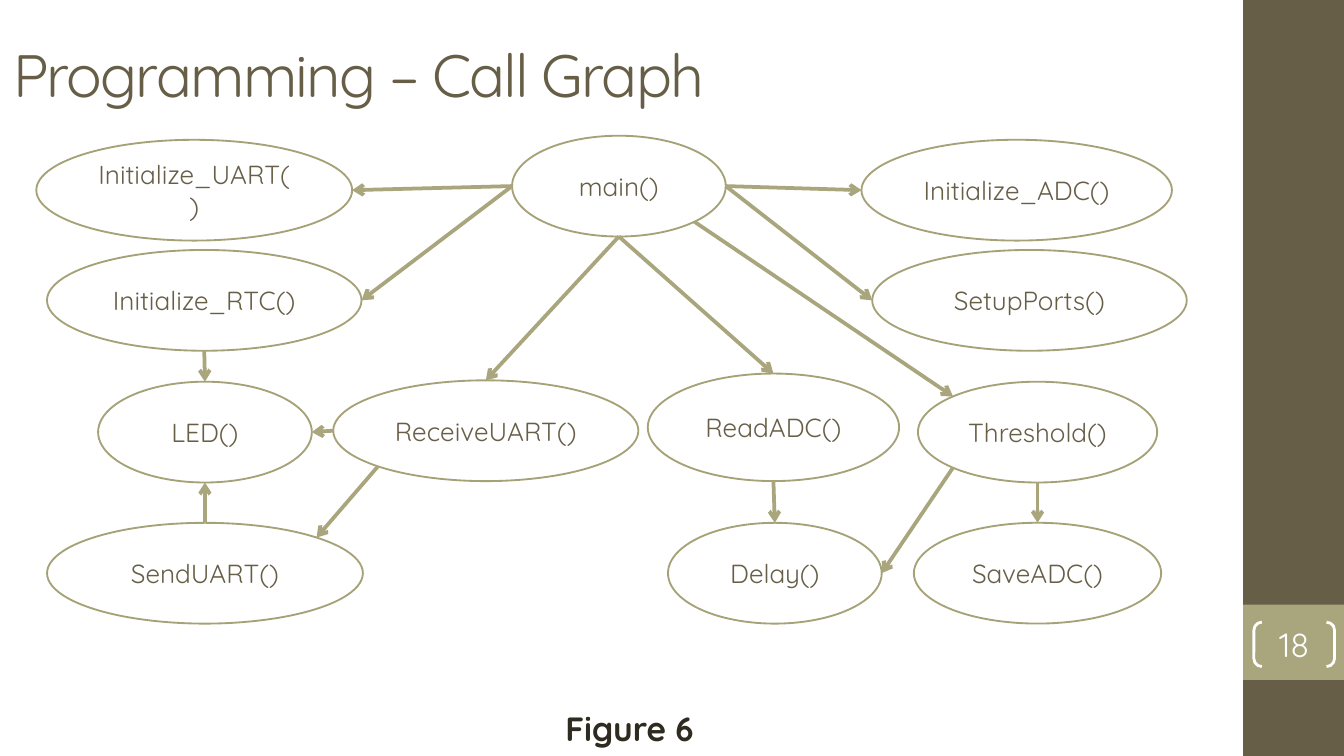
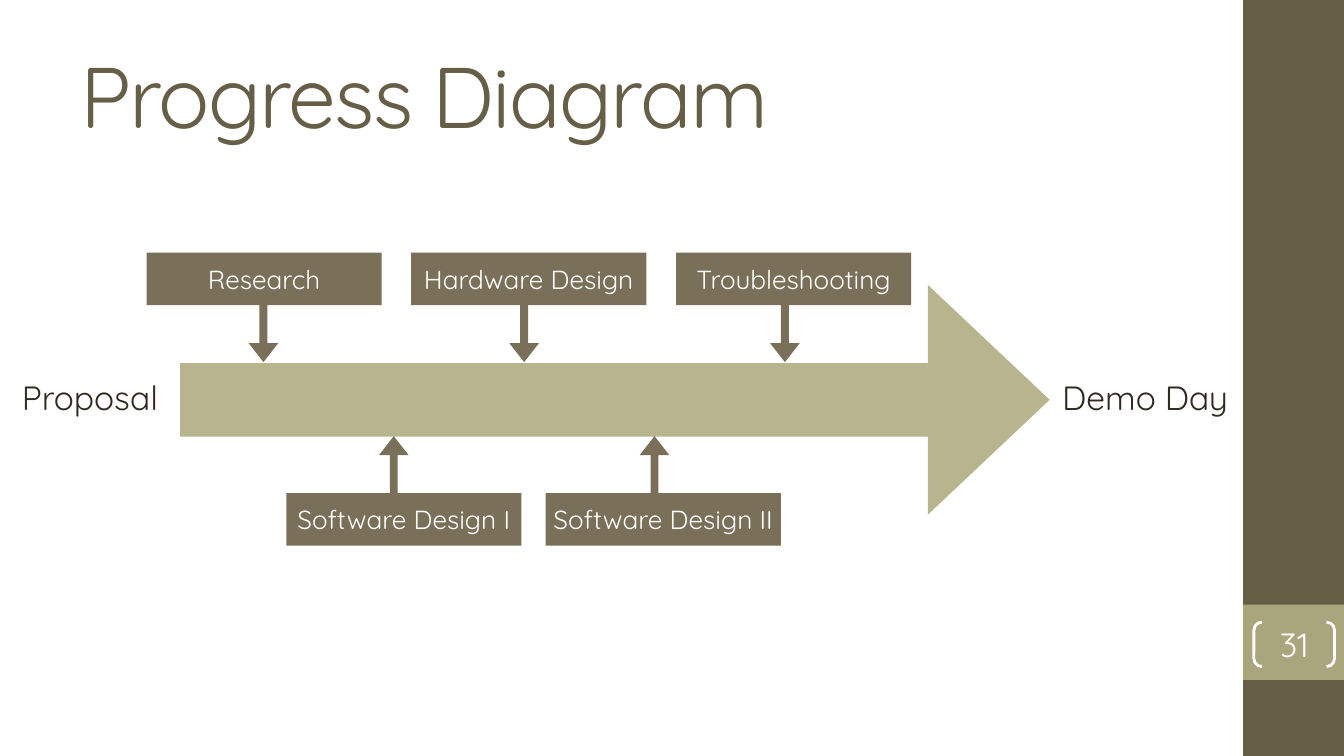
from math import sqrt

from lxml import etree
from pptx import Presentation
from pptx.dml.color import RGBColor
from pptx.enum.shapes import MSO_CONNECTOR, MSO_SHAPE
from pptx.enum.text import MSO_ANCHOR, PP_ALIGN
from pptx.oxml.ns import qn
from pptx.util import Inches, Pt

RECT, OVAL = MSO_SHAPE.RECTANGLE, MSO_SHAPE.OVAL
ARROW, BRACKETS = MSO_SHAPE.RIGHT_ARROW, MSO_SHAPE.DOUBLE_BRACKET
STRAIGHT = MSO_CONNECTOR.STRAIGHT
LEFT, CENTER = PP_ALIGN.LEFT, PP_ALIGN.CENTER
TOP_ANCHOR, MIDDLE = MSO_ANCHOR.TOP, MSO_ANCHOR.MIDDLE

SLIDE_W = 10
SLIDE_H = SLIDE_W * 9 / 16


class Theme:
    font = "Quicksand"
    dark, accent, outline = "675E47", "A9A57C", "A6A278"
    step, timeline = "7A7059", "B8B48E"
    ink, white = "2F2B20", "FFFFFF"
    body, label = 14, 18


# Slide 1: title, page, functions as (left, top, width, height), and calls
CALL_GRAPH = {"text": "Programming – Call Graph", "left": 0, "top": 0.08, "size": 32}
CALL_GRAPH_PAGE = "18"
CAPTION = "Figure 6"
FUNCTIONS = {
    "main()": (3.81, 1.01, 1.59, 0.75),
    "Initialize_UART()": (0.27, 1.04, 2.35, 0.75),
    "Initialize_ADC()": (6.41, 1.04, 2.31, 0.75),
    "Initialize_RTC()": (0.35, 1.86, 2.34, 0.75),
    "SetupPorts()": (6.49, 1.86, 2.34, 0.75),
    "LED()": (0.73, 2.84, 1.59, 0.75),
    "ReceiveUART()": (2.48, 2.83, 2.27, 0.75),
    "ReadADC()": (4.82, 2.78, 1.87, 0.8),
    "Threshold()": (6.83, 2.84, 1.78, 0.75),
    "SendUART()": (0.35, 3.89, 2.35, 0.75),
    "Delay()": (4.97, 3.89, 1.59, 0.75),
    "SaveADC()": (6.8, 3.89, 1.84, 0.75),
}
CALLS = [
    ("main()", "left", "Initialize_UART()", "right"),
    ("main()", "right", "Initialize_ADC()", "left"),
    ("main()", "left", "Initialize_RTC()", "right"),
    ("main()", "right", "SetupPorts()", "left"),
    ("main()", "bottom", "ReceiveUART()", "top"),
    ("main()", "bottom", "ReadADC()", "top"),
    ("main()", "bottom right", "Threshold()", "top left"),
    ("Initialize_RTC()", "bottom", "LED()", "top"),
    ("ReceiveUART()", "left", "LED()", "right"),
    ("ReceiveUART()", "bottom left", "SendUART()", "top right"),
    ("SendUART()", "top", "LED()", "bottom"),
    ("ReadADC()", "bottom", "Delay()", "top"),
    ("Threshold()", "bottom left", "Delay()", "right"),
    ("Threshold()", "bottom", "SaveADC()", "top"),
]

# Slide 2: title, page, end labels, and rows of steps along the timeline
PROGRESS = {"text": "Progress Diagram", "left": 0.5, "top": 0.23, "size": 46}
PROGRESS_PAGE = "31"
END_LABELS = [("Proposal", 0, 1.34), ("Demo Day", 7.78, 1.48)]
STEP_ROWS = [
    {"steps": ["Research", "Hardware Design", "Troubleshooting"],
     "left": 1.09, "pitch": 1.97, "top": 1.88, "arrow_y": 2.48, "turn": 90},
    {"steps": ["Software Design I", "Software Design II"],
     "left": 2.13, "pitch": 1.93, "top": 3.67, "arrow_y": 3.46, "turn": 270},
]
STEP_W, STEP_H = 1.75, 0.39
ARROW_W, ARROW_H = 0.43, 0.22
FIRST_ARROW_X, ARROW_PITCH = 1.96, 0.97

# Connection sites of an ellipse: index, and offset from its centre in radii
DIAGONAL = 1 / sqrt(2)
SITES = {
    "top": (0, 0, -1),
    "top left": (1, -DIAGONAL, -DIAGONAL),
    "left": (2, -1, 0),
    "bottom left": (3, -DIAGONAL, DIAGONAL),
    "bottom": (4, 0, 1),
    "bottom right": (5, DIAGONAL, DIAGONAL),
    "right": (6, 1, 0),
    "top right": (7, DIAGONAL, -DIAGONAL),
}


def rgb(color):
    return RGBColor.from_string(color)


def set_text(sp, text, color, size=Theme.body, bold=False, align=CENTER,
             anchor=MIDDLE, inset=None, spacing=None):
    tf = sp.text_frame
    frame = {"word_wrap": True, "vertical_anchor": anchor}
    if inset is not None:
        sides = ("left", "top", "right", "bottom")
        frame.update({f"margin_{side}": Inches(inset) for side in sides})
    for name, value in frame.items():
        setattr(tf, name, value)
    p = tf.paragraphs[0]
    p.alignment = align
    r = p.add_run()
    r.text = text
    for name, value in {"name": Theme.font, "size": Pt(size), "bold": bold}.items():
        setattr(r.font, name, value)
    r.font.color.rgb = rgb(color)
    if spacing is not None:
        r.font._element.set("spc", str(spacing * 100))


def add_box(s, kind, box, fill=None, line=None, width=1, adjust=()):
    sp = s.shapes.add_shape(kind, *map(Inches, box))
    sp.shadow.inherit = False
    if fill:
        sp.fill.solid()
        sp.fill.fore_color.rgb = rgb(fill)
    else:
        sp.fill.background()
    if line:
        sp.line.color.rgb = rgb(line)
        sp.line.width = Pt(width)
    else:
        sp.line.fill.background()
    for i, value in enumerate(adjust):
        sp.adjustments[i] = value
    return sp


def add_label(s, box, text, color, **fmt):
    set_text(s.shapes.add_textbox(*map(Inches, box)), text, color, **fmt)


def add_slide(prs, title, page):
    """Add a blank slide with the side band, page badge and title."""
    s = prs.slides.add_slide(prs.slide_layouts[6])
    add_box(s, RECT, (9.25, 0, 0.75, SLIDE_H), Theme.dark)
    add_box(s, RECT, (9.25, 4.5, 0.75, 0.56), Theme.accent)
    add_label(s, (title["left"], title["top"], 8.33, 0.94), title["text"],
              Theme.dark, size=title["size"], align=LEFT, spacing=-1)
    badge = add_box(s, BRACKETS, (9.33, 4.63, 0.6, 0.33), line=Theme.white,
                    width=1.5, adjust=(0.18,))
    set_text(badge, page, Theme.white, size=Theme.label, inset=0)
    return s


def site_point(sp, site):
    _, dx, dy = SITES[site]
    return (round(sp.left + sp.width * (1 + dx) / 2),
            round(sp.top + sp.height * (1 + dy) / 2))


def add_call(s, caller, start, callee, end):
    """Draw an arrow joined to the given sites of two ellipses."""
    c = s.shapes.add_connector(STRAIGHT, *site_point(caller, start),
                               *site_point(callee, end))
    c.line.color.rgb = rgb(Theme.accent)
    c.line.width = Pt(2)
    etree.SubElement(c.line._get_or_add_ln(), qn("a:tailEnd"), type="arrow")
    etree.SubElement(c._element.spPr, qn("a:effectLst"))
    joints = c._element.nvCxnSpPr.cNvCxnSpPr
    for joint, sp, site in ((joints.get_or_add_stCxn(), caller, start),
                            (joints.get_or_add_endCxn(), callee, end)):
        joint.id, joint.idx = sp.shape_id, SITES[site][0]


def build_call_graph(prs):
    s = add_slide(prs, CALL_GRAPH, CALL_GRAPH_PAGE)
    nodes = {}
    for name, box in FUNCTIONS.items():
        nodes[name] = add_box(s, OVAL, box, line=Theme.outline)
        set_text(nodes[name], name, Theme.dark)
    for caller, start, callee, end in CALLS:
        add_call(s, nodes[caller], start, nodes[callee], end)
    add_label(s, (4.02, 5.22, 1.33, 0.4), CAPTION, Theme.ink,
              size=Theme.label, bold=True, anchor=TOP_ANCHOR)


def build_progress(prs):
    s = add_slide(prs, PROGRESS, PROGRESS_PAGE)
    add_box(s, ARROW, (1.34, 2.12, 6.47, 1.71), Theme.timeline, adjust=(0.32, 0.53))
    for text, left, width in END_LABELS:
        add_label(s, (left, 2.77, width, 0.37), text, Theme.ink,
                  size=Theme.label, inset=0.03)
    for n, row in enumerate(STEP_ROWS):
        for col, text in enumerate(row["steps"]):
            left = row["left"] + col * row["pitch"]
            step = add_box(s, RECT, (left, row["top"], STEP_W, STEP_H), Theme.step)
            set_text(step, text, Theme.white, inset=0)
            # The two rows take turns along the timeline
            x = FIRST_ARROW_X + (2 * col + n) * ARROW_PITCH
            box = (x - ARROW_W / 2, row["arrow_y"] - ARROW_H / 2, ARROW_W, ARROW_H)
            arrow = add_box(s, ARROW, box, Theme.step, adjust=(0.27, 0.64))
            arrow.rotation = row["turn"]


def main():
    prs = Presentation()
    prs.slide_width, prs.slide_height = Inches(SLIDE_W), Inches(SLIDE_H)
    build_call_graph(prs)
    build_progress(prs)
    prs.save("out.pptx")


if __name__ == "__main__":
    main()
